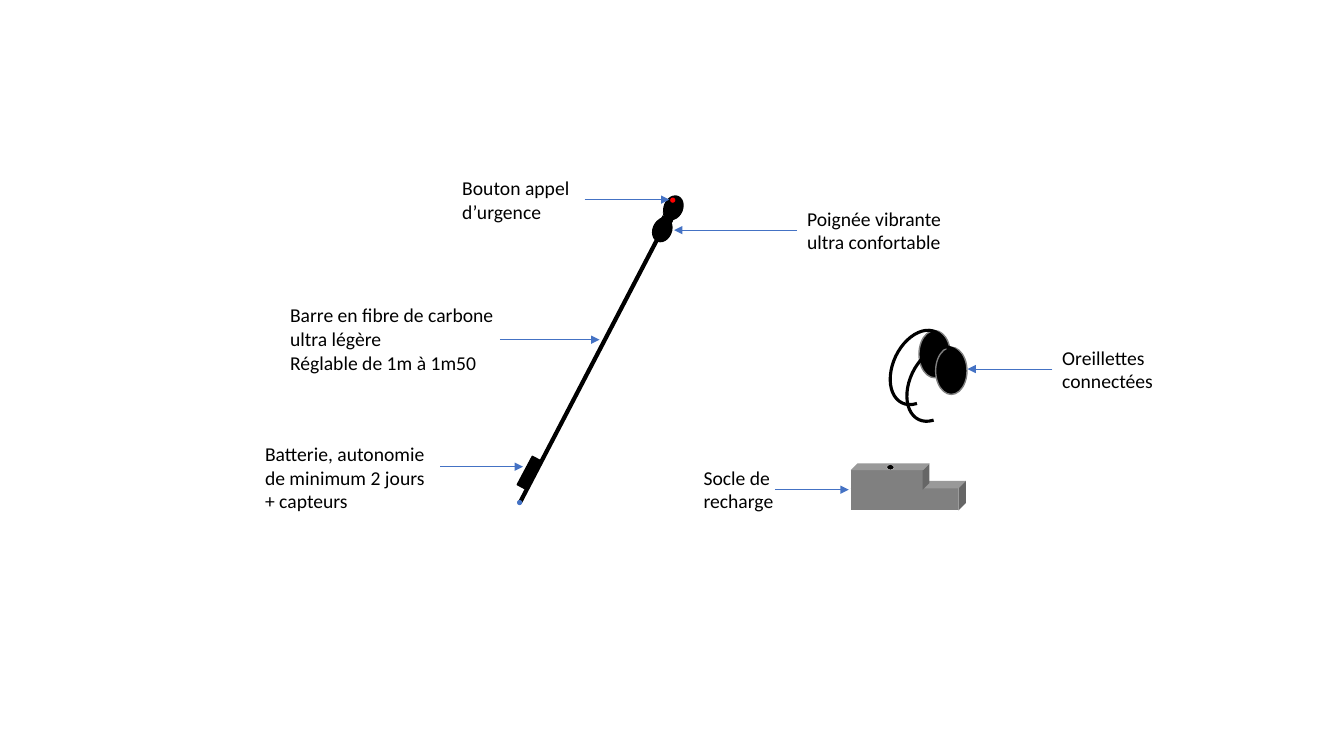
from dataclasses import dataclass
from typing import Optional

from lxml.etree import SubElement
from pptx import Presentation
from pptx.dml.color import RGBColor
from pptx.enum.shapes import MSO_CONNECTOR, MSO_SHAPE
from pptx.enum.text import MSO_AUTO_SIZE
from pptx.oxml.ns import qn
from pptx.shapes.autoshape import Shape
from pptx.shapes.connector import Connector
from pptx.shapes.shapetree import SlideShapes
from pptx.util import Cm, Pt

COLOURS = {
    "black": "000000",
    "blue": "4472C4",
    "red": "FF0000",
    "grey": "808080",
    "pale": "E7E6E6",
}
LABEL_FONT = {"name": "Calibri", "size": Pt(14), "bold": False}
LABEL_FRAME = {"word_wrap": True, "auto_size": MSO_AUTO_SIZE.SHAPE_TO_FIT_TEXT}


@dataclass(frozen=True)
class Part:
    """A preset shape, with lengths in centimetres."""

    kind: MSO_SHAPE
    left: float
    top: float
    width: float
    height: float
    fill: Optional[str] = "black"
    line: Optional[str] = "black"
    weight: float = 1
    rotation: float = 0
    angles: tuple[float, ...] = ()


@dataclass(frozen=True)
class Label:
    """A caption and the arrow that leads from it to its part."""

    paragraphs: tuple[str, ...]
    left: float
    top: float
    width: float
    height: float
    arrow_start: float
    arrow_end: float
    arrow_y: float
    joined: bool = False


DOT = MSO_SHAPE.FLOWCHART_CONNECTOR
HANDLE = [
    Part(DOT, 16.74, 4.93, 0.46, 0.61, rotation=22.7),
    Part(MSO_SHAPE.RECTANGLE, 13.21, 11.51, 0.25, 0.81, rotation=28),
    Part(DOT, 16.46, 5.49, 0.46, 0.61, rotation=22.7),
    Part(MSO_SHAPE.ARC, 16.94, 5.44, 0.28, 0.36, None, weight=0.5, rotation=242.9),
    Part(MSO_SHAPE.ARC, 16.41, 5.23, 0.28, 0.36, None, weight=0.5, rotation=65.8),
]
NECK = [
    [(16.69, 5.49), (16.74, 5.46), (16.74, 5.44), (16.76, 5.46),
     (16.76, 5.49), (16.79, 5.51), (16.81, 5.44), (16.76, 5.44)],
    [(16.89, 5.56), (16.94, 5.56), (16.92, 5.59)],
    [(16.89, 5.54), (16.94, 5.56), (16.89, 5.59)],
    [(16.92, 5.61), (16.9, 5.56), (16.94, 5.56)],
    [(16.76, 5.49), (16.74, 5.49), (16.71, 5.46)],
    [(16.76, 5.41), (16.74, 5.44), (16.75, 5.44)],
]
BUTTON_AND_TIP = [
    Part(DOT, 16.89, 4.98, 0.13, 0.13, "red", None),
    Part(DOT, 13.03, 12.6, 0.13, 0.13, "blue", None),
]
CHARGING_BASE = [
    Part(MSO_SHAPE.CUBE, 21.44, 12.12, 2.9, 0.74, "grey", None),
    Part(MSO_SHAPE.CUBE, 21.44, 11.68, 1.98, 0.66, "grey", None),
    Part(MSO_SHAPE.OVAL, 22.35, 11.71, 0.18, 0.13, "black", "pale", 0.25),
]
EARPIECES = [
    part
    for shift in (0, 0.42)
    for part in (
        Part(MSO_SHAPE.OVAL, 23.16 + shift, 8.33 + shift, 0.79, 1.19, "black", "grey"),
        Part(MSO_SHAPE.ARC, 22.17 + shift, 8.61 + shift, 1.98, 1.3, None,
             weight=2.25, rotation=295.4, angles=(94.67, 11.19)),
    )
]
LABELS = [
    Label(("Poignée vibrante ultra confortable",),
          20.09, 5.08, 3.94, 1.44, 20.09, 16.99, 5.8, True),
    Label(("Bouton appel d’urgence",),
          11.4, 4.32, 3.71, 1.44, 14.73, 16.87, 5.03),
    Label(("Barre en fibre de carbone ultra légère", "Réglable de 1m à 1m50"),
          7.06, 7.52, 5.74, 2.06, 12.6, 15.11, 8.56),
    Label(("Batterie, autonomie de minimum 2 jours", "+ capteurs"),
          6.43, 11.02, 5.05, 2.06, 11.1, 13.18, 11.76),
    Label(("Socle de recharge",),
          17.48, 11.61, 2.77, 1.44, 19.53, 21.39, 12.34),
    Label(("Oreillettes connectées",),
          26.52, 8.58, 2.95, 1.44, 26.52, 24.38, 9.3, True),
]


def colour(name: str) -> RGBColor:
    """Return the named colour."""
    return RGBColor.from_string(COLOURS[name])


def paint(shape: Shape, fill: Optional[str], line: Optional[str], weight: float) -> None:
    """Set the fill and outline of a shape and remove its shadow."""
    shape.shadow.inherit = False
    for target, name in ((shape.fill, fill), (shape.line.fill, line)):
        if name:
            target.solid()
            target.fore_color.rgb = colour(name)
        else:
            target.background()
    if line:
        shape.line.width = Pt(weight)


def draw_part(shapes: SlideShapes, part: Part) -> None:
    """Draw one preset shape."""
    box = (Cm(part.left), Cm(part.top), Cm(part.width), Cm(part.height))
    shape = shapes.add_shape(part.kind, *box)
    shape.rotation = part.rotation
    for index, angle in enumerate(part.angles):
        shape.adjustments[index] = angle
    paint(shape, part.fill, part.line, part.weight)


def draw_outline(shapes: SlideShapes, points: list[tuple[float, float]]) -> None:
    """Draw one closed black piece of the neck of the handle."""
    start, *others = [(Cm(x), Cm(y)) for x, y in points]
    builder = shapes.build_freeform(*start)
    builder.add_line_segments(others, close=True)
    paint(builder.convert_to_shape(), "black", "black", 1)


def draw_line(shapes: SlideShapes, start: tuple[float, float],
              end: tuple[float, float], name: str, weight: float) -> Connector:
    """Draw a straight line without shadow."""
    ends = [Cm(value) for value in (*start, *end)]
    line = shapes.add_connector(MSO_CONNECTOR.STRAIGHT, *ends)
    line.line.color.rgb = colour(name)
    line.line.width = Pt(weight)
    SubElement(line._element.spPr, qn("a:effectLst"))
    return line


def draw_label(shapes: SlideShapes, label: Label) -> None:
    """Write a caption and draw its arrow."""
    arrow = draw_line(shapes, (label.arrow_start, label.arrow_y),
                      (label.arrow_end, label.arrow_y), "blue", 0.5)
    SubElement(arrow.line._get_or_add_ln(), qn("a:tailEnd"), type="triangle")
    box = (Cm(label.left), Cm(label.top), Cm(label.width), Cm(label.height))
    caption = shapes.add_textbox(*box)
    frame = caption.text_frame
    for key, value in LABEL_FRAME.items():
        setattr(frame, key, value)
    frame.text = "\n".join(label.paragraphs)
    for paragraph in frame.paragraphs:
        for key, value in LABEL_FONT.items():
            setattr(paragraph.runs[0].font, key, value)
        paragraph.runs[0].font.color.rgb = colour("black")
    if label.joined:
        arrow.begin_connect(caption, 1)


def main() -> None:
    """Build the slide of the connected cane."""
    presentation = Presentation()
    presentation.slide_width = Cm(33.87)
    presentation.slide_height = Cm(19.05)
    shapes = presentation.slides.add_slide(presentation.slide_layouts[6]).shapes
    draw_line(shapes, (16.94, 5.31), (13.11, 12.65), "black", 3)
    for part in HANDLE:
        draw_part(shapes, part)
    for points in NECK:
        draw_outline(shapes, points)
    for part in BUTTON_AND_TIP + CHARGING_BASE + EARPIECES:
        draw_part(shapes, part)
    for label in LABELS:
        draw_label(shapes, label)
    presentation.save("out.pptx")


if __name__ == "__main__":
    main()
